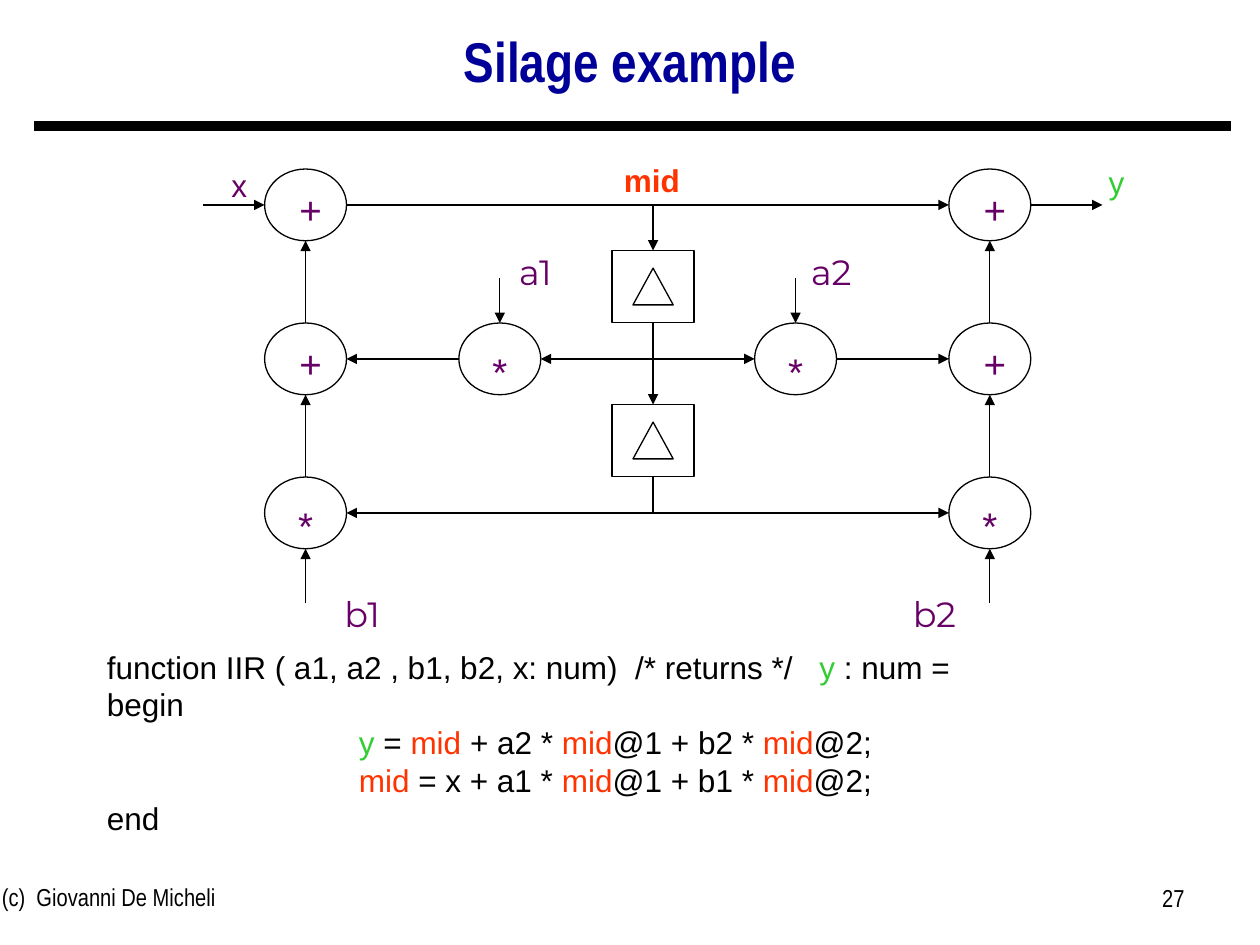
from dataclasses import dataclass

from lxml import etree
from pptx import Presentation
from pptx.dml.color import RGBColor
from pptx.enum.shapes import MSO_CONNECTOR, MSO_SHAPE
from pptx.enum.text import MSO_ANCHOR, PP_ALIGN
from pptx.oxml.ns import qn
from pptx.util import Pt

OVAL, RECT, TRIANGLE = MSO_SHAPE.OVAL, MSO_SHAPE.RECTANGLE, MSO_SHAPE.ISOSCELES_TRIANGLE
STRAIGHT = MSO_CONNECTOR.STRAIGHT
LEFT, CENTER, RIGHT = PP_ALIGN.LEFT, PP_ALIGN.CENTER, PP_ALIGN.RIGHT
TOP, MIDDLE = MSO_ANCHOR.TOP, MSO_ANCHOR.MIDDLE


@dataclass(frozen=True)
class Theme:
    ink: str = "000000"
    title: str = "000099"
    symbol: str = "660066"
    output: str = "33CC33"
    state: str = "FF3300"
    body_font: str = "Arial"
    narrow_font: str = "Arial Narrow"
    label_font: str = "Montserrat"
    title_size: float = 32
    symbol_size: float = 22
    label_size: float = 20
    body_size: float = 18
    footer_size: float = 14
    thin: float = 0.75
    thick: float = 6


T = Theme()


def add_text(slide, lines, x, y, w, h, size=T.body_size, font=T.body_font, color=T.ink,
             bold=False, align=LEFT, anchor=TOP, spacing=None, wrap=True):
    """Each line is a string, or an (indent, runs) pair with (text, color) runs."""
    tf = slide.shapes.add_textbox(Pt(x), Pt(y), Pt(w), Pt(h)).text_frame
    tf.word_wrap = wrap
    tf.vertical_anchor = anchor
    for i, line in enumerate(lines):
        indent, runs = (0, [(line, color)]) if isinstance(line, str) else line
        p = tf.add_paragraph() if i else tf.paragraphs[0]
        p.alignment = align
        if spacing:
            p.line_spacing = spacing
        if indent:
            p._p.get_or_add_pPr().set("marL", str(Pt(indent)))
        for text, run_color in runs:
            r = p.add_run()
            r.text = text
            r.font.size, r.font.name, r.font.bold = Pt(size), font, bold
            r.font.color.rgb = RGBColor.from_string(run_color)


def add_line(slide, x1, y1, x2, y2, width=T.thin, head=False, tail=False):
    c = slide.shapes.add_connector(STRAIGHT, Pt(x1), Pt(y1), Pt(x2), Pt(y2))
    c.line.color.rgb = RGBColor.from_string(T.ink)
    c.line.width = Pt(width)
    ln = c.line._get_or_add_ln()
    for tag, wanted in (("a:headEnd", head), ("a:tailEnd", tail)):
        if wanted:
            etree.SubElement(ln, qn(tag)).set("type", "triangle")
    etree.SubElement(c._element.spPr, qn("a:effectLst"))


def add_outline(slide, kind, cx, cy, w, h):
    """Place an unfilled shape by its centre."""
    sp = slide.shapes.add_shape(kind, Pt(cx - w / 2), Pt(cy - h / 2), Pt(w), Pt(h))
    sp.shadow.inherit = False
    sp.fill.background()
    sp.line.color.rgb = RGBColor.from_string(T.ink)
    sp.line.width = Pt(T.thin)


def header(slide, x, y, w, h):
    add_line(slide, x - 34.5, y + 80, x + w + 37.5, y + 80, width=T.thick)
    add_text(slide, ["Silage example"], x, y, w, h, size=T.title_size, font=T.narrow_font,
             color=T.title, bold=True, align=CENTER, anchor=MIDDLE, spacing=0.9)


def data_flow(slide, x, y):
    """Draw the filter graph: adders and multipliers around a chain of two delays."""
    node_w, node_h = 46.8, 41
    half_w, half_h = node_w / 2, node_h / 2
    pitch = 88
    top, middle, bottom = rows = [y + half_h + i * pitch for i in range(3)]
    left, mul_left, delay, mul_right, right = (x + d for d in (58.6, 169.6, 257.2, 338.6, 449.6))
    delays = [top + 46.6, middle + 46.6]
    symbol_offset = {"+": (2.9, 6), "*": (0, 10.5)}

    def node(cx, cy, symbol):
        add_outline(slide, OVAL, cx, cy, node_w, node_h)
        dx, dy = symbol_offset[symbol]
        add_text(slide, [symbol], cx + dx - 20, cy - half_h + dy, 40, 34,
                 size=T.symbol_size, color=T.symbol, align=CENTER)

    def arrow(x1, y1, x2, y2, head=False):
        add_line(slide, x1, y1, x2, y2, head=head, tail=True)

    def label(text, cx, ly, **style):
        style = {"color": T.symbol, "align": CENTER, **style}
        add_text(slide, [text], cx - 26, ly, 52, 30, **style)

    for cx in (left, right):
        for cy, symbol in zip(rows, "++*"):
            node(cx, cy, symbol)
        for cy in rows[:2]:
            arrow(cx, cy + pitch - half_h, cx, cy + half_h)
        arrow(cx, bottom + half_h + 31, cx, bottom + half_h)

    for cx in (mul_left, mul_right):
        node(cx, middle, "*")
        arrow(cx, middle - half_h - 25.6, cx, middle - half_h)

    for cy in delays:
        add_outline(slide, RECT, delay, cy, node_w, node_h)
        add_outline(slide, TRIANGLE, delay, cy, 23, 21)

    arrow(x, top, left - half_w, top)
    arrow(left + half_w, top, right - half_w, top)
    arrow(right + half_w, top, x + 514, top)
    arrow(mul_left - half_w, middle, left + half_w, middle)
    arrow(mul_right + half_w, middle, right - half_w, middle)
    arrow(mul_left + half_w, middle, mul_right - half_w, middle, head=True)
    arrow(left + half_w, bottom, right - half_w, bottom, head=True)
    arrow(delay, top, delay, delays[0] - half_h)
    arrow(delay, delays[0] + half_h, delay, delays[1] - half_h)
    add_line(slide, delay, delays[1] + half_h, delay, bottom)

    label("x", x + 20.8, y - 5)
    label("y", x + 522, y - 7.2, color=T.output)
    label("mid", delay - 0.6, y - 8, color=T.state, bold=True, wrap=False)
    coefficients = (("a1", mul_left + 20.4, y + 43.2), ("a2", mul_right + 20.4, y + 43.2),
                    ("b1", left + 32.4, y + 238.3), ("b2", right - 31.6, y + 238.3))
    for text, cx, ly in coefficients:
        label(text, cx, ly, size=T.label_size, font=T.label_font)


def code(slide, x, y, w, h):
    ink, y_out, mid = T.ink, ("y", T.output), ("mid", T.state)
    lines = [
        (0, [("function IIR ( a1, a2 , b1, b2, x: num)  /* returns */   ", ink),
             y_out, (" : num =", ink)]),
        "begin",
        (144, [y_out, (" = ", ink), mid, (" + a2 * ", ink), mid,
               ("@1 + b2 * ", ink), mid, ("@2;", ink)]),
        (144, [mid, (" = x + a1 * ", ink), mid,
               ("@1 + b1 * ", ink), mid, ("@2;", ink)]),
        "end",
    ]
    add_text(slide, lines, x, y, w, h)


def footer(slide, x, y, w, h):
    style = {"size": T.footer_size, "font": T.narrow_font}
    add_text(slide, ["(c)  Giovanni De Micheli"], x, y, 228, h, **style)
    add_text(slide, ["27"], x + w - 168, y + 0.7, 168, h, align=RIGHT, **style)


def main():
    prs = Presentation()
    prs.slide_width, prs.slide_height = Pt(720), Pt(540)
    slide = prs.slides.add_slide(prs.slide_layouts[6])
    header(slide, 54, -8, 612, 90)
    data_flow(slide, 116, 96.6)
    code(slide, 54, 366.5, 584, 115)
    footer(slide, -6, 500.4, 690, 37)
    prs.save("out.pptx")


if __name__ == "__main__":
    main()
